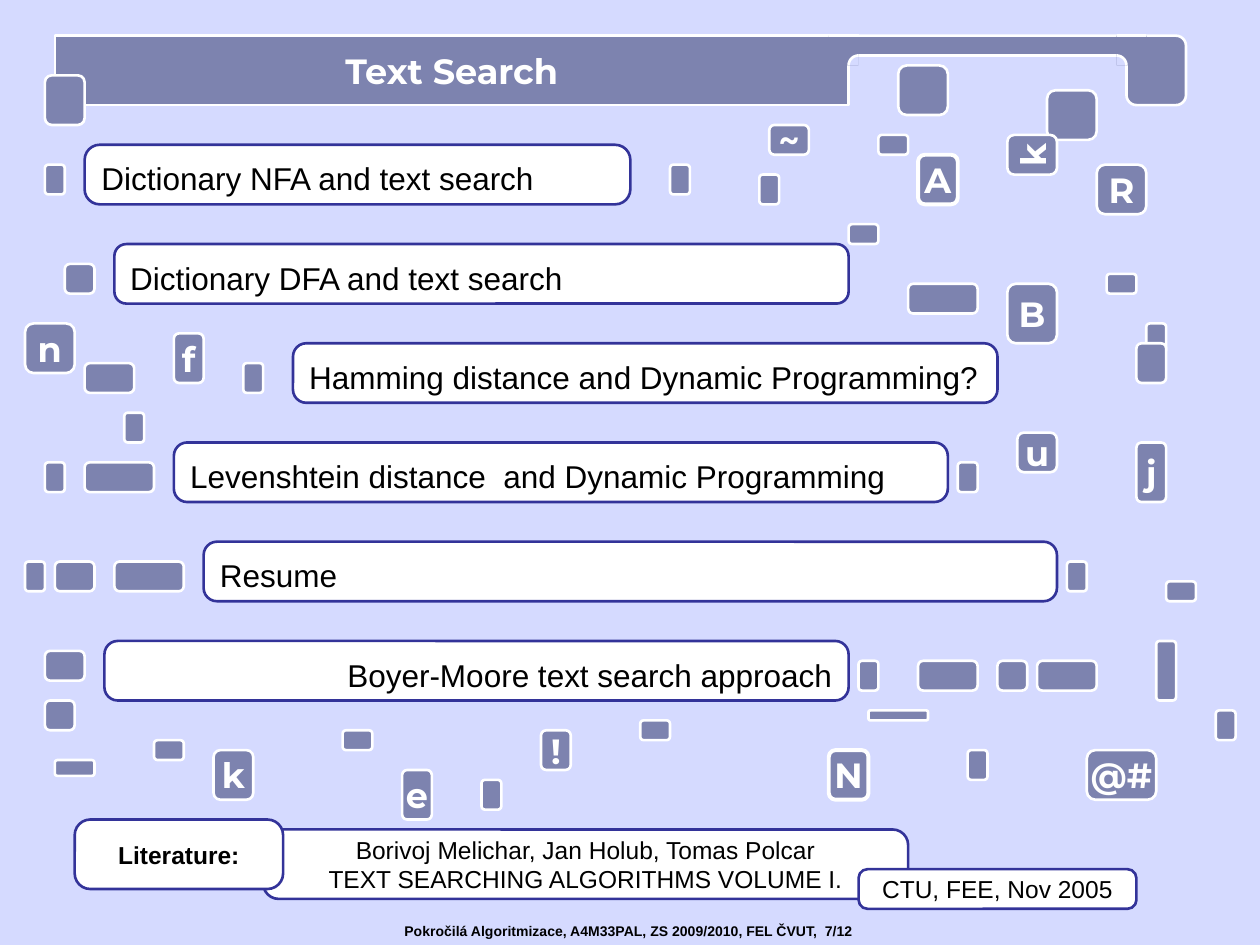
from dataclasses import dataclass
from math import cos, pi, sin

from lxml.etree import SubElement
from pptx import Presentation
from pptx.dml.color import RGBColor
from pptx.enum.shapes import MSO_CONNECTOR, MSO_SHAPE
from pptx.enum.text import MSO_ANCHOR, MSO_AUTO_SIZE, PP_ALIGN
from pptx.oxml import parse_xml
from pptx.oxml.ns import nsdecls, qn
from pptx.util import Pt

SKY = RGBColor(0xD5, 0xDA, 0xFF)
SLATE = RGBColor(0x7D, 0x83, 0xAF)
NAVY = RGBColor(0x33, 0x33, 0x99)
WHITE = RGBColor(0xFF, 0xFF, 0xFF)
BLACK = RGBColor(0, 0, 0)

# All shapes sit on a 2 mm grid, slightly offset from the slide corner
UNIT, LEFT, TOP = 5.67, 3, 3.4
EDGE = 1.5

HEAD = {"name": "Montserrat", "size": Pt(20), "bold": True}
ITEM = {"name": "Arial", "size": Pt(18), "bold": False}
BOOK = {"name": "Arial", "size": Pt(14), "bold": False}
LABEL = {"name": "Arial", "size": Pt(14), "bold": True}
FOOT = {"name": "Arial", "size": Pt(8), "bold": True}


@dataclass
class Tile:
    col: float
    row: float
    wide: float
    high: float
    text: str = ""
    edge: float = EDGE
    turn: int = 0
    bend: float = 0.17


@dataclass
class Bar:
    col: float
    row: float
    wide: float
    high: float
    text: str
    font: dict
    align: PP_ALIGN = PP_ALIGN.CENTER
    gap: float = 1.0
    bend: float = 0.224


BARS = [
    Bar(8, 14, 55, 6, "Dictionary NFA and text search", ITEM, PP_ALIGN.LEFT, 1.2, 0.253),
    Bar(29, 34, 71, 6, "Hamming distance and Dynamic Programming?", ITEM, PP_ALIGN.LEFT, 1.2),
    Bar(11, 24, 74, 6, "Dictionary DFA and text search", ITEM, PP_ALIGN.LEFT, 1.2, 0.202),
    Bar(17, 44, 78, 6, "Levenshtein distance  and Dynamic Programming", ITEM, PP_ALIGN.LEFT, 1.2),
    Bar(20, 54, 86, 6, "Resume", ITEM, PP_ALIGN.LEFT, 1.2),
    Bar(10, 64, 75, 6, "Boyer-Moore text search approach", ITEM, PP_ALIGN.RIGHT, 1.2),
]
BOOKS = [
    Bar(26, 83, 65, 7, "Borivoj Melichar, Jan Holub, Tomas Polcar\n"
        "TEXT SEARCHING ALGORITHMS VOLUME I.", BOOK),
    Bar(86, 87, 28, 4, "CTU, FEE, Nov 2005", BOOK),
    Bar(7, 82, 21, 7, "Literature:", LABEL),
]

# Plain tiles: size -> grid places
PLAIN = {
    (2, 3): [(4, 16), (4, 46), (12, 41), (115, 32), (2, 56), (67, 16), (76, 17), (24, 36),
             (96, 46), (107, 56), (122, 71), (86, 66), (48, 78), (97, 75)],
    (3, 2): [(111, 27), (117, 58), (15, 74), (85, 22), (64, 72), (34, 73), (88, 13)],
    (3, 3): [(4, 70), (6, 26), (100, 66)],
    (4, 3): [(4, 65), (5, 56)],
    (7, 3): [(8, 46), (11, 56), (91, 28)],
    (6, 3): [(92, 66), (104, 66)],
    (5, 3): [(8, 36)],
    (5, 5): [(90, 6), (105, 8.5)],
    (4, 5): [(4, 7)],
    (3, 4): [(114, 34)],
    (2, 6): [(116, 64)],
    (6, 1): [(87, 71)],
    (4, 1.6): [(5, 76)],
}
SIGNS = [
    Tile(101, 28, 5, 6, "B"), Tile(110, 16, 5, 5, "R"), Tile(92, 15, 4, 5, "A", 2.25),
    Tile(114, 44, 3, 6, "j"), Tile(77, 12, 4, 3, "~"), Tile(102, 43, 4, 4, "u"),
    Tile(2, 32, 5, 5, "n"), Tile(40, 77, 3, 5, "e"), Tile(109, 75, 7, 5, "@#"),
    Tile(83, 75, 4, 5, "N", 2.25), Tile(21, 75, 4, 5, "k"), Tile(54, 73, 3, 4, "!"),
    Tile(101.5, 12.5, 4, 5, "k", turn=270), Tile(17, 33, 3, 5, "f"),
]


def across(col: float) -> int:
    return Pt(LEFT + col * UNIT)


def down(row: float) -> int:
    return Pt(TOP + row * UNIT)


def span(cells: float) -> int:
    return Pt(cells * UNIT)


def paint(shape, fill: RGBColor, line: RGBColor, edge: float) -> None:
    shape.fill.solid()
    shape.fill.fore_color.rgb = fill
    shape.line.color.rgb = line
    shape.line.width = Pt(edge)


def write(shape, text: str, font: dict, ink: RGBColor, align=PP_ALIGN.CENTER, gap=1.0) -> None:
    frame = shape.text_frame
    frame.text = text
    form = {"word_wrap": False, "auto_size": MSO_AUTO_SIZE.NONE,
            "vertical_anchor": MSO_ANCHOR.MIDDLE}
    for key, value in form.items():
        setattr(frame, key, value)
    for para in frame.paragraphs:
        para.alignment, para.line_spacing = align, gap
        for key, value in font.items():
            setattr(para.runs[0].font, key, value)
        para.runs[0].font.color.rgb = ink


def box(slide, part, kind, fill: RGBColor, line: RGBColor, edge: float):
    shape = slide.shapes.add_shape(kind, across(part.col), down(part.row),
                                   span(part.wide), span(part.high))
    shape.shadow.inherit = False
    paint(shape, fill, line, edge)
    if kind == MSO_SHAPE.ROUNDED_RECTANGLE:
        shape.adjustments[0] = part.bend
    return shape


def tile(slide, part: Tile) -> None:
    shape = box(slide, part, MSO_SHAPE.ROUNDED_RECTANGLE, SLATE, WHITE, part.edge)
    shape.rotation = part.turn
    if part.text:
        write(shape, part.text, HEAD, WHITE)


def bar(slide, part: Bar) -> None:
    shape = box(slide, part, MSO_SHAPE.ROUNDED_RECTANGLE, WHITE, NAVY, EDGE)
    write(shape, part.text, part.font, BLACK, part.align, part.gap)


def corner(slide, col: float, side: int) -> None:
    """Join the banner to a notch wall; the arc is centred on (col, 6)."""
    block = Tile(min(col, col + side * 3), 3, 3, 3)
    if side < 0:
        block.col = col - 3
    box(slide, block, MSO_SHAPE.RECTANGLE, SLATE, SLATE, EDGE).line.fill.background()
    rim = slide.shapes.add_connector(MSO_CONNECTOR.STRAIGHT, across(col), down(3),
                                     across(col + side * 3), down(3))
    rim.line.color.rgb = WHITE
    rim.line.width = Pt(EDGE)
    SubElement(rim._element.spPr, qn("a:effectLst"))
    turns = [step * pi / 24 for step in range(13)]
    arc = [(across(col + side * sin(a)), down(6 - cos(a))) for a in turns]
    for solid in (True, False):
        pen = slide.shapes.build_freeform(*arc[0], scale=1.0)
        pen.add_line_segments(arc[1:] + [(across(col), down(6))] * solid, close=solid)
        shape = pen.convert_to_shape()
        shape.shadow.inherit = False
        paint(shape, SKY, WHITE, EDGE)
        (shape.line.fill if solid else shape.fill).background()


def title(slide) -> None:
    shape = slide.shapes.title
    place = {"left": across(5), "top": down(3), "width": span(80), "height": span(7)}
    for key, value in place.items():
        setattr(shape, key, value)
    shape._element.spPr.append(parse_xml(
        f'<a:prstGeom {nsdecls("a")} prst="roundRect"><a:avLst>'
        '<a:gd name="adj" fmla="val 18800"/></a:avLst></a:prstGeom>'))
    paint(shape, SLATE, WHITE, EDGE)
    write(shape, "Text Search", HEAD, WHITE)
    slide.shapes._spTree.append(shape._element)


def main() -> None:
    deck = Presentation()
    deck.slide_width, deck.slide_height = Pt(720), Pt(540)
    slide = deck.slides.add_slide(deck.slide_layouts[5])
    slide.background.fill.solid()
    slide.background.fill.fore_color.rgb = SKY

    # Banner with its notch
    tile(slide, Tile(51, 3, 64, 2, bend=0.5))
    title(slide)
    corner(slide, 86, -1)
    tile(slide, Tile(113, 3, 6, 7))
    corner(slide, 112, 1)

    # Topics, scattered tiles, literature
    for part in BARS:
        bar(slide, part)
    for size, spots in PLAIN.items():
        for spot in spots:
            tile(slide, Tile(*spot, *size))
    for part in SIGNS:
        tile(slide, part)
    for part in BOOKS:
        bar(slide, part)

    # Footer
    foot = slide.shapes.add_textbox(Pt(224), Pt(523.4), Pt(273.6), Pt(16.6))
    write(foot, "Pokročilá Algoritmizace, A4M33PAL, ZS 2009/2010, FEL ČVUT,  7/12",
          FOOT, BLACK, PP_ALIGN.LEFT)
    deck.save("out.pptx")


if __name__ == "__main__":
    main()
